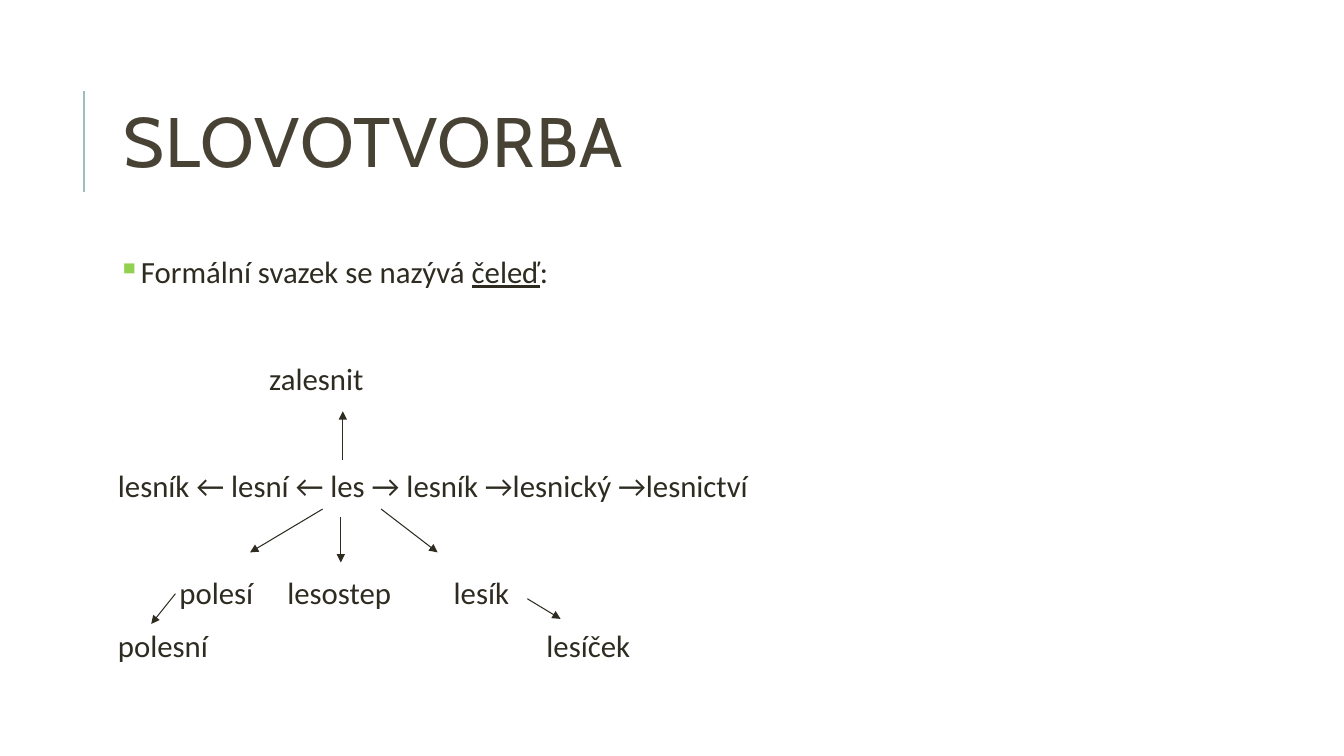
import pptx
import pptx.util
import pptx.dml.color
import pptx.enum.shapes
import pptx.enum.text
import pptx.oxml.ns
import lxml.etree

Inches = pptx.util.Inches
Pt = pptx.util.Pt
RGBColor = pptx.dml.color.RGBColor
qn = pptx.oxml.ns.qn

BROWN = RGBColor(0x47, 0x42, 0x33)
INK = RGBColor(0x2E, 0x2B, 0x21)
TEAL = RGBColor(0x9C, 0xBE, 0xBD)
GREEN = RGBColor(0x92, 0xD0, 0x50)


class Board:
    """Draws the title, words and arrows of a word family on one slide."""

    top = 2.5
    pitch = 0.53
    size = 22

    def __init__(self, deck):
        self.slide = deck.slides.add_slide(deck.slide_layouts[5])

    def style(self, para, face, size, color, space):
        para.font.name = face
        para.font.size = Pt(size)
        para.font.color.rgb = color
        para.line_spacing = space
        para.alignment = pptx.enum.text.PP_ALIGN.LEFT

    def title(self, text):
        shape = self.slide.shapes.title
        shape.left, shape.top = Inches(1.12), Inches(0.64)
        shape.width, shape.height = Inches(10.63), Inches(1.64)
        frame = shape.text_frame
        frame.text = text
        frame.auto_size = pptx.enum.text.MSO_AUTO_SIZE.NONE
        frame.vertical_anchor = pptx.enum.text.MSO_ANCHOR.MIDDLE
        para = frame.paragraphs[0]
        self.style(para, "Cabin", 50, BROWN, 0.8)
        para.runs[0].font._element.set("spc", "100")

    def words(self, row, left, width, *parts):
        box = self.slide.shapes.add_textbox(
            Inches(left), Inches(self.top + row * self.pitch), Inches(width), Inches(0.45))
        frame = box.text_frame
        frame.word_wrap = True
        frame.margin_left = frame.margin_right = Inches(0.05)
        frame.margin_top = frame.margin_bottom = Inches(0.05)
        para = frame.paragraphs[0]
        for part in parts:
            para.add_run().text = part
        self.style(para, "Calibri", self.size, INK, 0.9)
        return para

    def bullet(self, para, mark, color):
        props = para._p.get_or_add_pPr()
        props.set("marL", str(Inches(0.17)))
        props.set("indent", str(-Inches(0.17)))
        tint = lxml.etree.SubElement(props, qn("a:buClr"))
        lxml.etree.SubElement(tint, qn("a:srgbClr")).set("val", str(color))
        lxml.etree.SubElement(props, qn("a:buChar")).set("char", mark)

    def line(self, start, end, color=INK, width=0.75, head=True):
        link = self.slide.shapes.add_connector(
            pptx.enum.shapes.MSO_CONNECTOR.STRAIGHT,
            *(Inches(n) for n in (*start, *end)))
        link.line.color.rgb = color
        link.line.width = Pt(width)
        if head:
            tail = lxml.etree.SubElement(link.line._get_or_add_ln(), qn("a:tailEnd"))
            tail.set("type", "triangle")
        lxml.etree.SubElement(link._element.spPr, qn("a:effectLst"))


def main():
    deck = pptx.Presentation()
    deck.slide_width, deck.slide_height = Inches(13.33), Inches(7.5)
    board = Board(deck)
    board.line((0.83, 1.9), (0.83, 0.9), TEAL, 1.5, False)
    board.title("SLOVOTVORBA")

    intro = board.words(0, 1.12, 10.63, "Formální svazek se nazývá ", "čeleď", ":")
    intro.runs[1].font.underline = True
    board.bullet(intro, "▪", GREEN)

    for row, left, width, text in (
        (2, 2.62, 1.4, "zalesnit"),
        (4, 1.12, 10.63, "lesník ← lesní ← les → lesník →lesnický →lesnictví"),
        (6, 1.73, 1.0, "polesí"),
        (6, 2.8, 1.4, "lesostep"),
        (6, 4.45, 1.0, "lesík"),
        (7, 1.12, 1.4, "polesní"),
        (7, 5.37, 1.4, "lesíček"),
    ):
        board.words(row, left, width, text)

    for start, end in (
        ((3.4, 4.56), (3.4, 4.08)),
        ((3.38, 5.13), (3.38, 5.58)),
        ((3.78, 5.05), (4.34, 5.48)),
        ((3.2, 5.05), (2.48, 5.48)),
        ((5.23, 5.94), (5.56, 6.14)),
        ((1.74, 5.89), (1.5, 6.19)),
    ):
        board.line(start, end)
    deck.save("out.pptx")


if __name__ == "__main__":
    main()
